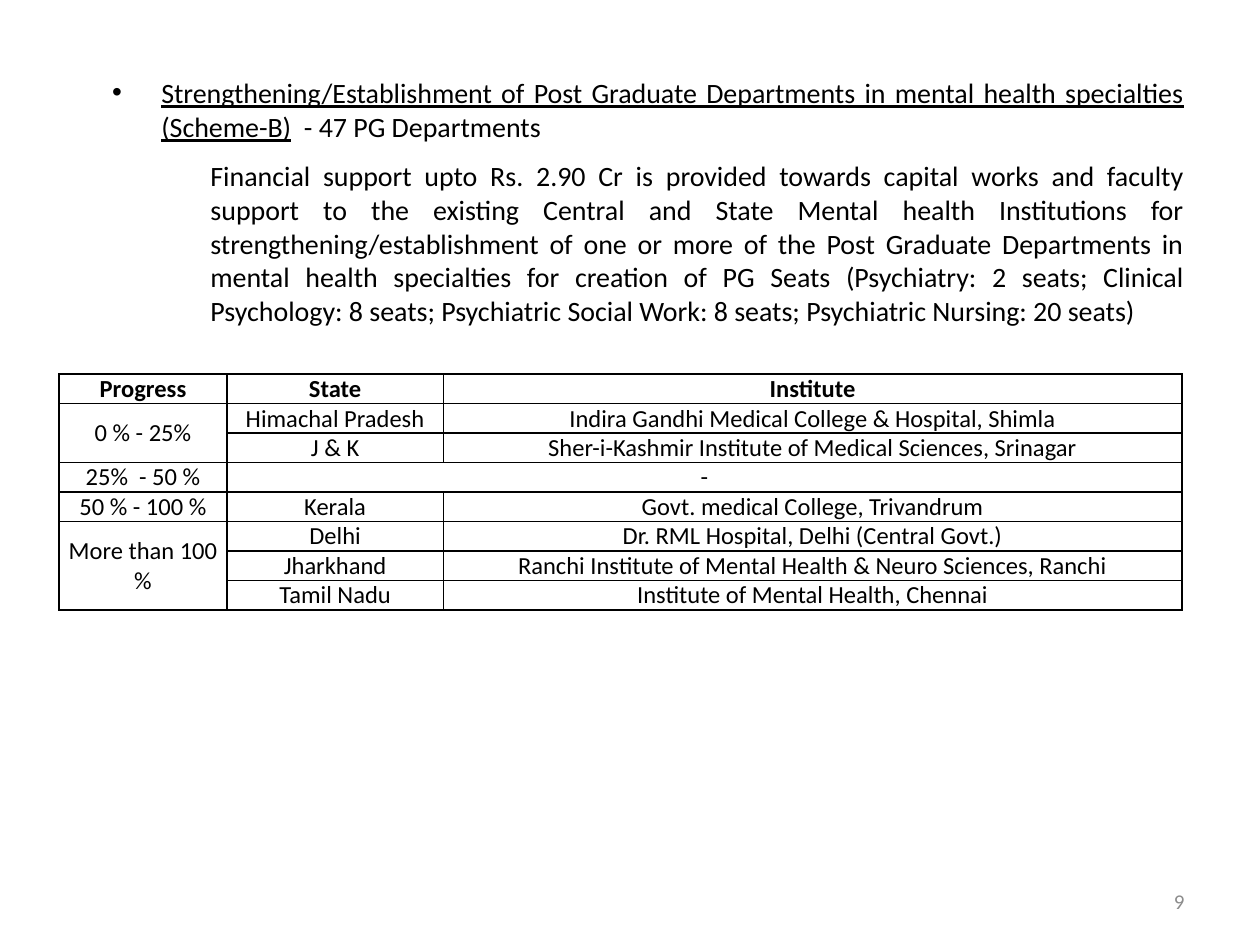
from pptx import Presentation, util as u
from pptx.dml.color import RGBColor
from pptx.enum import text
from pptx.oxml import parse_xml
from pptx.oxml.ns import nsdecls

BLACK, GREY = "000000", "8C8C8C"
COLUMNS = [1.33, 1.72, 5.86]
ROW_HEIGHT = 1.87 / 8
ROWS = [
    ("Progress", "State", "Institute"),
    ("0 % - 25%", "Himachal Pradesh", "Indira Gandhi Medical College & Hospital, Shimla"),
    ("", "J & K", "Sher-i-Kashmir Institute of Medical Sciences, Srinagar"),
    ("25%  - 50 %", "-", ""),
    ("50 % - 100 %", "Kerala", "Govt. medical College, Trivandrum"),
    ("More than 100 %", "Delhi", "Dr. RML Hospital, Delhi (Central Govt.)"),
    ("", "Jharkhand", "Ranchi Institute of Mental Health & Neuro Sciences, Ranchi"),
    ("", "Tamil Nadu", "Institute of Mental Health, Chennai"),
]
MERGES = [((1, 0), (2, 0)), ((3, 1), (3, 2)), ((5, 0), (7, 0))]
SCHEME = ("Strengthening/Establishment of Post Graduate Departments "
          "in mental health specialties (Scheme-B)")
SUPPORT = (
    "Financial support upto Rs. 2.90 Cr is provided towards capital works and faculty "
    "support to the existing Central and State Mental health Institutions for "
    "strengthening/establishment of one or more of the Post Graduate Departments in "
    "mental health specialties for creation of PG Seats (Psychiatry: 2 seats; Clinical "
    "Psychology: 8 seats; Psychiatric Social Work: 8 seats; Psychiatric Nursing: 20 seats)"
)


def style(span, size, color=BLACK, bold=False, underline=False):
    """Format one run."""
    font = span.font
    font.name, font.size = "Calibri", u.Pt(size)
    font.bold, font.underline = bold, underline
    font.color.rgb = RGBColor.from_string(color)


def format_point(para, margin, indent, bullet):
    """Set the justified layout and the bullet of a body paragraph."""
    para.level = 6
    para.alignment = text.PP_ALIGN.JUSTIFY
    para.space_before, para.space_after = u.Pt(3.2), u.Pt(6)
    props = para._p.get_or_add_pPr()
    props.set("marL", str(u.Inches(margin)))
    props.set("indent", str(u.Inches(indent)))
    props.append(parse_xml(bullet))


def fill_body(box):
    """Write the scheme and its explanation in the body placeholder."""
    box.left, box.top, box.width, box.height = map(u.Inches, (0.5, 0.55, 9, 6.15))
    frame = box.text_frame
    frame.auto_size = text.MSO_AUTO_SIZE.NONE
    scheme = frame.paragraphs[0]
    for words, underline in ((SCHEME, True), ("  - 47 PG Departments", False)):
        span = scheme.add_run()
        span.text = words
        style(span, 16, underline=underline)
    format_point(scheme, 0.68, -0.39, f'<a:buChar {nsdecls("a")} char="•"/>')
    support = frame.add_paragraph()
    support.text = SUPPORT
    style(support.runs[0], 16)
    format_point(support, 1.07, 0, f'<a:buNone {nsdecls("a")}/>')


def add_borders(cell):
    """Draw a thin black line on each side of a cell."""
    props = cell._tc.get_or_add_tcPr()
    for side in "LRTB":
        props.append(parse_xml(
            f'<a:ln{side} {nsdecls("a")} w="{u.Pt(1)}"><a:solidFill>'
            f'<a:srgbClr val="{BLACK}"/></a:solidFill></a:ln{side}>'))


def fill_cell(cell, words, header):
    """Write and format one table cell."""
    add_borders(cell)
    cell.fill.background()
    cell.margin_left = cell.margin_right = u.Inches(0.07)
    cell.margin_top = cell.margin_bottom = 0
    cell.vertical_anchor = text.MSO_ANCHOR.TOP if header else text.MSO_ANCHOR.MIDDLE
    para = cell.text_frame.paragraphs[0]
    para.text = words
    para.alignment = text.PP_ALIGN.CENTER
    para.font.size = u.Pt(14)
    for span in para.runs:
        style(span, 14, bold=header)


def add_progress_table(page):
    """Add the table of institutes grouped by progress."""
    frame = page.shapes.add_table(
        len(ROWS), len(COLUMNS), u.Inches(0.47), u.Inches(2.97),
        u.Inches(sum(COLUMNS)), u.Inches(ROW_HEIGHT * len(ROWS)))
    table = frame.table
    table.first_row = table.horz_banding = False
    for column, width in zip(table.columns, COLUMNS):
        column.width = u.Inches(width)
    for i, row in enumerate(ROWS):
        for j, words in enumerate(row):
            fill_cell(table.cell(i, j), words, header=i == 0)
    for first, last in MERGES:
        table.cell(*first).merge(table.cell(*last))


def add_page_number(page, number):
    """Add the page number at the lower right."""
    box = page.shapes.add_textbox(*map(u.Inches, (7.17, 6.95, 2.33, 0.4)))
    frame = box.text_frame
    frame.word_wrap = True
    frame.vertical_anchor = text.MSO_ANCHOR.MIDDLE
    para = frame.paragraphs[0]
    para.text = number
    para.alignment = text.PP_ALIGN.RIGHT
    style(para.runs[0], 12, GREY)


def main():
    """Build the slide and save it."""
    deck = Presentation()
    deck.slide_width, deck.slide_height = u.Inches(10), u.Inches(7.5)
    page = deck.slides.add_slide(deck.slide_layouts[1])
    title = page.shapes.title
    title.element.getparent().remove(title.element)
    fill_body(page.placeholders[1])
    add_page_number(page, "9")
    add_progress_table(page)
    deck.save("out.pptx")


if __name__ == "__main__":
    main()
